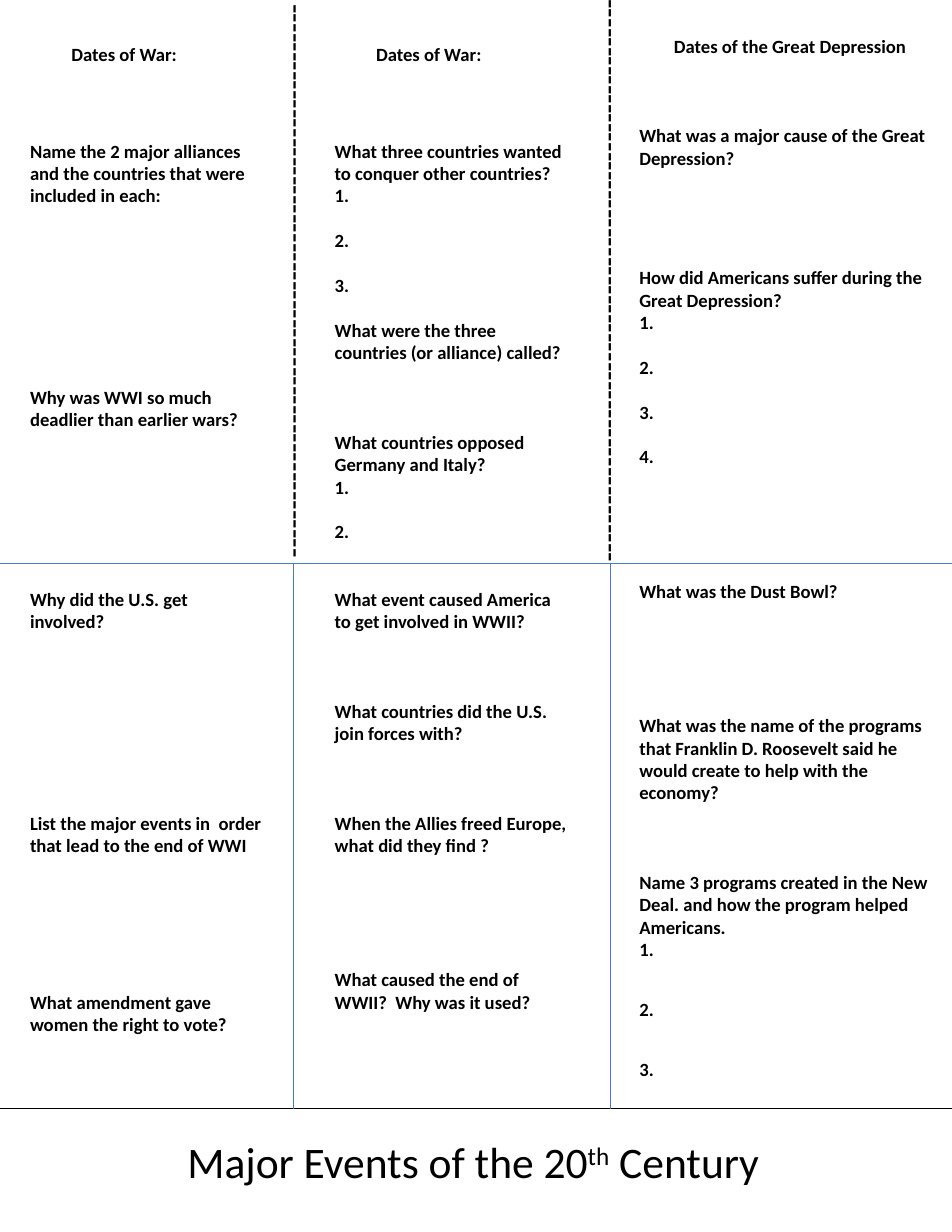
from pptx import Presentation
from pptx.dml.color import RGBColor
from pptx.enum.shapes import MSO_CONNECTOR
from pptx.enum.text import MSO_ANCHOR, MSO_AUTO_SIZE, PP_ALIGN
from pptx.oxml import parse_xml
from pptx.oxml.ns import nsdecls
from pptx.util import Inches, Pt

STRAIGHT = MSO_CONNECTOR.STRAIGHT
TOP = MSO_ANCHOR.TOP
FIXED = MSO_AUTO_SIZE.NONE
CENTER, LEFT = PP_ALIGN.CENTER, PP_ALIGN.LEFT
BLACK = RGBColor(0x00, 0x00, 0x00)
BLUE = RGBColor(0x4B, 0x7E, 0xBC)
FONT = "Calibri"
ROW = 14.4

WAR_ONE = [
    (0, "Dates of War:"),
    (48, "Name the 2 major alliances and the countries that were"),
    (0, "included in each:"),
    (8 * ROW, "Why was WWI so much deadlier than earlier wars?"),
    (7 * ROW, "Why did the U.S. get involved?"),
    (8 * ROW, "List the major events in  order that lead to the end of WWI"),
    (6 * ROW, "What amendment gave women the right to vote?"),
]
WAR_TWO = [
    (0, "Dates of War:"),
    (48, "What three countries wanted to conquer other countries?"),
    (0, "1."),
    (ROW, "2."),
    (ROW, "3."),
    (ROW, "What were the three countries (or alliance) called?"),
    (3 * ROW, "What countries opposed Germany and Italy?"),
    (0, "1."),
    (ROW, "2."),
    (2 * ROW, "What event caused America to get involved in WWII?"),
    (3 * ROW, "What countries did the U.S. join forces with?"),
    (3 * ROW, "When the Allies freed Europe, what did they find ?"),
    (5 * ROW, "What caused the end of WWII?  Why was it used?"),
]
SLUMP = [
    (0, "Dates of the Great Depression"),
    (3 * ROW, "What was a major cause of the Great Depression?"),
    (48 + ROW, "How did Americans suffer during the Great Depression?"),
    (0, "1."),
    (ROW, "2."),
    (ROW, "3."),
    (ROW, "4."),
    (5 * ROW, "What was the Dust Bowl?"),
    (5 * ROW, "What was the name of the programs that Franklin D. Roosevelt "
              "said he would create to help with the economy?"),
    (3 * ROW, "Name 3 programs created in the New Deal. and how the program "
              "helped Americans."),
    (0, "1."),
    (24, "2."),
    (24, "3."),
]


def style(run, size, bold=False):
    """Set the font of a run."""
    font = run.font
    font.name, font.size, font.bold = FONT, Pt(size), bold
    font.color.rgb = BLACK


def add_box(slide, box):
    """Add a wrapping text box of fixed size."""
    shape = slide.shapes.add_textbox(*map(Inches, box))
    shape.text_frame.word_wrap = True
    shape.text_frame.auto_size = FIXED
    return shape


def add_rule(slide, start, end, color):
    """Draw a thin straight rule."""
    line = slide.shapes.add_connector(STRAIGHT, *map(Inches, start + end))
    line.line.color.rgb = color
    line.line.width = Pt(0.75)
    line._element.spPr.append(parse_xml(f"<a:effectLst {nsdecls('a')}/>"))


def add_fold(slide, box, count):
    """Place a vertical fold mark made of dashes."""
    shape = add_box(slide, box)
    shape.rotation = 90
    frame = shape.text_frame
    frame.margin_left = frame.margin_right = Inches(0.11)
    frame.margin_top = frame.margin_bottom = Inches(0.06)
    frame.text = "-" * count
    style(frame.paragraphs[0].runs[0], 20)


def add_column(slide, box, items, indent=None):
    """Fill a column with a heading and spaced questions."""
    frame = add_box(slide, box).text_frame
    frame.text = "\n".join(text for _, text in items)
    for para, (gap, _) in zip(frame.paragraphs, items):
        if gap:
            para.space_before = Pt(gap)
        style(para.runs[0], 12, True)
    head = frame.paragraphs[0]
    head.alignment = LEFT if indent else CENTER
    if indent:
        head._p.get_or_add_pPr().set("marL", str(Inches(indent)))


def set_title(slide, box):
    """Place the title with its raised ordinal."""
    title = slide.shapes.title
    title.left, title.top, title.width, title.height = map(Inches, box)
    frame = title.text_frame
    frame.word_wrap, frame.auto_size = True, FIXED
    frame.vertical_anchor = TOP
    para = frame.paragraphs[0]
    para.alignment = CENTER
    for text in ("Major Events of the 20", "th", " Century"):
        run = para.add_run()
        run.text = text
        style(run, 28)
    para.runs[1]._r.get_or_add_rPr().set("baseline", "30000")


def main():
    """Build the fold-out review sheet."""
    deck = Presentation()
    deck.slide_width, deck.slide_height = Inches(8.5), Inches(11)
    slide = deck.slides.add_slide(deck.slide_layouts[5])
    left, right, mid, base = -0.04, 8.5, 5.03, 9.9
    add_rule(slide, (left, base), (right, base), BLACK)
    add_fold(slide, (0.04, 2.33, 5.25, 0.45), 58)
    add_fold(slide, (2.78, 2.36, 5.4, 0.45), 59)
    add_column(slide, (0.17, 0.33, 2.27, 9.05), WAR_ONE, 0.37)
    for x in (2.62, 5.45):
        add_rule(slide, (x, mid), (x, base), BLUE)
    add_rule(slide, (left, mid), (right, mid), BLUE)
    add_column(slide, (2.89, 0.33, 2.27, 9.26), WAR_TWO, 0.37)
    add_column(slide, (5.61, 0.26, 2.89, 9.86), SLUMP)
    set_title(slide, (-0.25, 10.08, 8.95, 0.57))
    deck.save("out.pptx")


if __name__ == "__main__":
    main()
